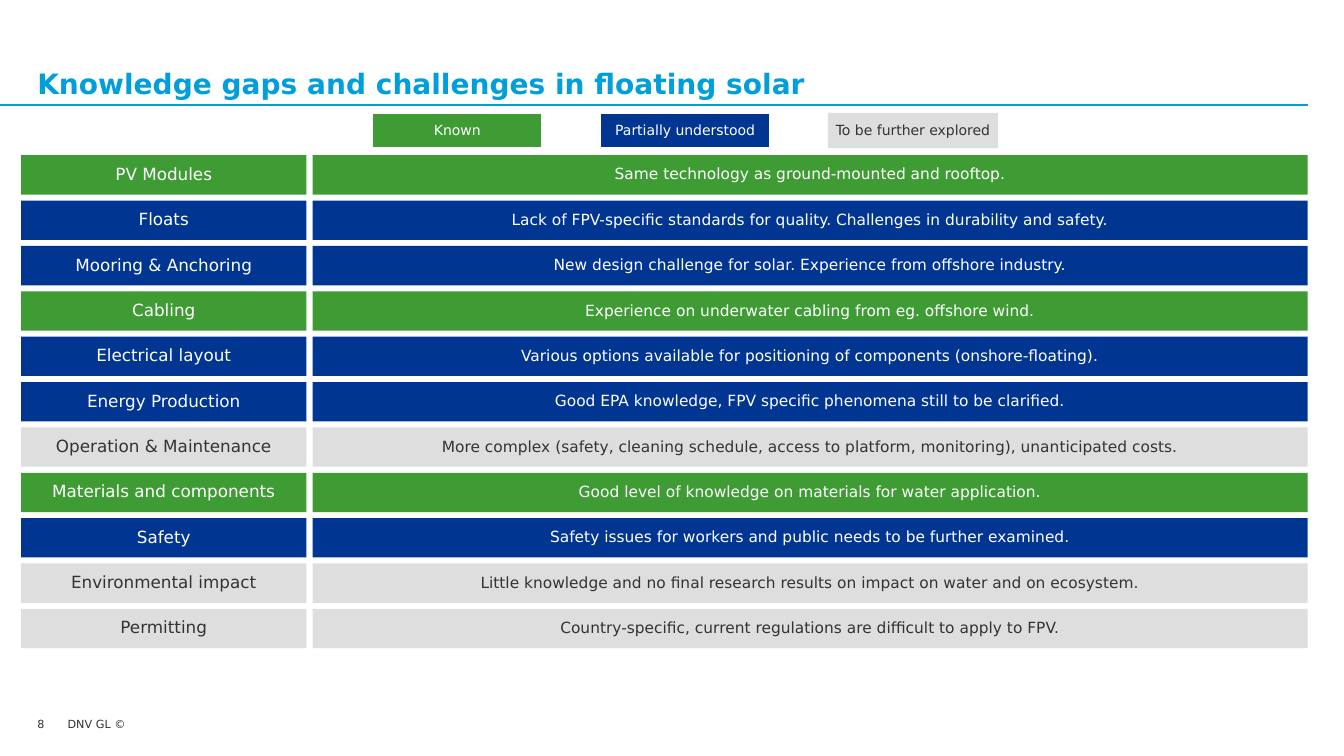
from lxml import etree
from pptx import Presentation
from pptx.dml.color import RGBColor
from pptx.enum.shapes import MSO_CONNECTOR, MSO_SHAPE
from pptx.enum.text import MSO_ANCHOR, PP_ALIGN
from pptx.oxml.ns import qn
from pptx.util import Inches, Pt

RECTANGLE = MSO_SHAPE.RECTANGLE
STRAIGHT = MSO_CONNECTOR.STRAIGHT
TOP, MIDDLE, BOTTOM = MSO_ANCHOR.TOP, MSO_ANCHOR.MIDDLE, MSO_ANCHOR.BOTTOM
LEFT, CENTER = PP_ALIGN.LEFT, PP_ALIGN.CENTER

FONT = "DejaVu Sans"
SKY = RGBColor(0x00, 0x9F, 0xDA)
GREEN = RGBColor(0x3F, 0x9C, 0x35)
NAVY = RGBColor(0x00, 0x35, 0x91)
GREY = RGBColor(0xDE, 0xDE, 0xDE)
DARK = RGBColor(0x33, 0x33, 0x33)
WHITE = RGBColor(0xFF, 0xFF, 0xFF)
TEXT_COLOR = {GREEN: WHITE, NAVY: WHITE, GREY: DARK}

RIGHT_EDGE = 12.97
MARGIN = 0.37
TOPIC_LEFT, TOPIC_WIDTH = 0.21, 2.83
FINDING_LEFT = 3.1
ROWS_TOP, ROW_PITCH, ROW_HEIGHT = 1.54, 0.45, 0.39
LEGEND_LEFT, LEGEND_PITCH = 3.69, 2.26
LEGEND_TOP, LEGEND_WIDTH, LEGEND_HEIGHT = 1.12, 1.69, 0.35
FOOTER_TOP = 7.12

LEGEND = [
    ("Known", GREEN),
    ("Partially understood", NAVY),
    ("To be further explored", GREY),
]
ROWS = [
    ("PV Modules", "Same technology as ground-mounted and rooftop.", GREEN),
    ("Floats", "Lack of FPV-specific standards for quality. Challenges in durability and safety.", NAVY),
    ("Mooring & Anchoring", "New design challenge for solar. Experience from offshore industry.", NAVY),
    ("Cabling", "Experience on underwater cabling from eg. offshore wind.", GREEN),
    ("Electrical layout", "Various options available for positioning of components (onshore-floating).", NAVY),
    ("Energy Production", "Good EPA knowledge, FPV specific phenomena still to be clarified.", NAVY),
    ("Operation & Maintenance",
     "More complex (safety, cleaning schedule, access to platform, monitoring), unanticipated costs.", GREY),
    ("Materials and components", "Good level of knowledge on materials for water application.", GREEN),
    ("Safety", "Safety issues for workers and public needs to be further examined.", NAVY),
    ("Environmental impact",
     "Little knowledge and no final research results on impact on water and on ecosystem.", GREY),
    ("Permitting", "Country-specific, current regulations are difficult to apply to FPV.", GREY),
]

presentation = Presentation()
presentation.slide_width = Inches(13.33)
presentation.slide_height = Inches(7.5)
slide = presentation.slides.add_slide(presentation.slide_layouts[6])


def write(shape, text, size, color, anchor=TOP, align=LEFT, inset=0, bold=False):
    """Set the single paragraph of a shape and return it."""
    frame = shape.text_frame
    frame.word_wrap = True
    frame.vertical_anchor = anchor
    frame.margin_left = frame.margin_right = Inches(inset)
    frame.margin_top = frame.margin_bottom = Inches(inset)
    paragraph = frame.paragraphs[0]
    paragraph.alignment = align
    run = paragraph.add_run()
    run.text = text
    run.font.name = FONT
    run.font.size = Pt(size)
    run.font.bold = bold
    run.font.color.rgb = color
    return paragraph


def add_tile(left, top, width, height, text, size, fill):
    tile = slide.shapes.add_shape(
        RECTANGLE, Inches(left), Inches(top), Inches(width), Inches(height))
    tile.shadow.inherit = False
    tile.fill.solid()
    tile.fill.fore_color.rgb = fill
    tile.line.fill.background()
    paragraph = write(tile, text, size, TEXT_COLOR[fill], MIDDLE, CENTER, 0.04)
    paragraph.line_spacing = 0.9
    return tile


# Title and rule
title = slide.shapes.add_textbox(
    Inches(MARGIN), Inches(0.26), Inches(RIGHT_EDGE - MARGIN), Inches(0.73))
write(title, "Knowledge gaps and challenges in floating solar", 20, SKY, BOTTOM, bold=True)

title_rule = slide.shapes.add_connector(
    STRAIGHT, 0, Inches(1.04), Inches(RIGHT_EDGE), Inches(1.04))
title_rule.line.color.rgb = SKY
title_rule.line.width = Pt(1.25)
etree.SubElement(title_rule._element.spPr, qn("a:effectLst"))

# Topics and findings
for row, (topic, finding, status) in enumerate(ROWS):
    top = ROWS_TOP + row * ROW_PITCH
    add_tile(TOPIC_LEFT, top, TOPIC_WIDTH, ROW_HEIGHT, topic, 12, status)
    add_tile(FINDING_LEFT, top, RIGHT_EDGE - FINDING_LEFT, ROW_HEIGHT, finding, 11, status)

# Legend
for column, (label, status) in enumerate(LEGEND):
    key = add_tile(LEGEND_LEFT + column * LEGEND_PITCH, LEGEND_TOP,
                   LEGEND_WIDTH, LEGEND_HEIGHT, label, 10, status)
    if status != GREY:
        key.line.color.rgb = WHITE
        key.line.width = Pt(2)

# Footer
for left, width, text in [(MARGIN, 0.3, "8"), (0.67, 0.8, "DNV GL ©")]:
    footer = slide.shapes.add_textbox(
        Inches(left), Inches(FOOTER_TOP), Inches(width), Inches(0.2))
    write(footer, text, 8, DARK)

presentation.save("out.pptx")
